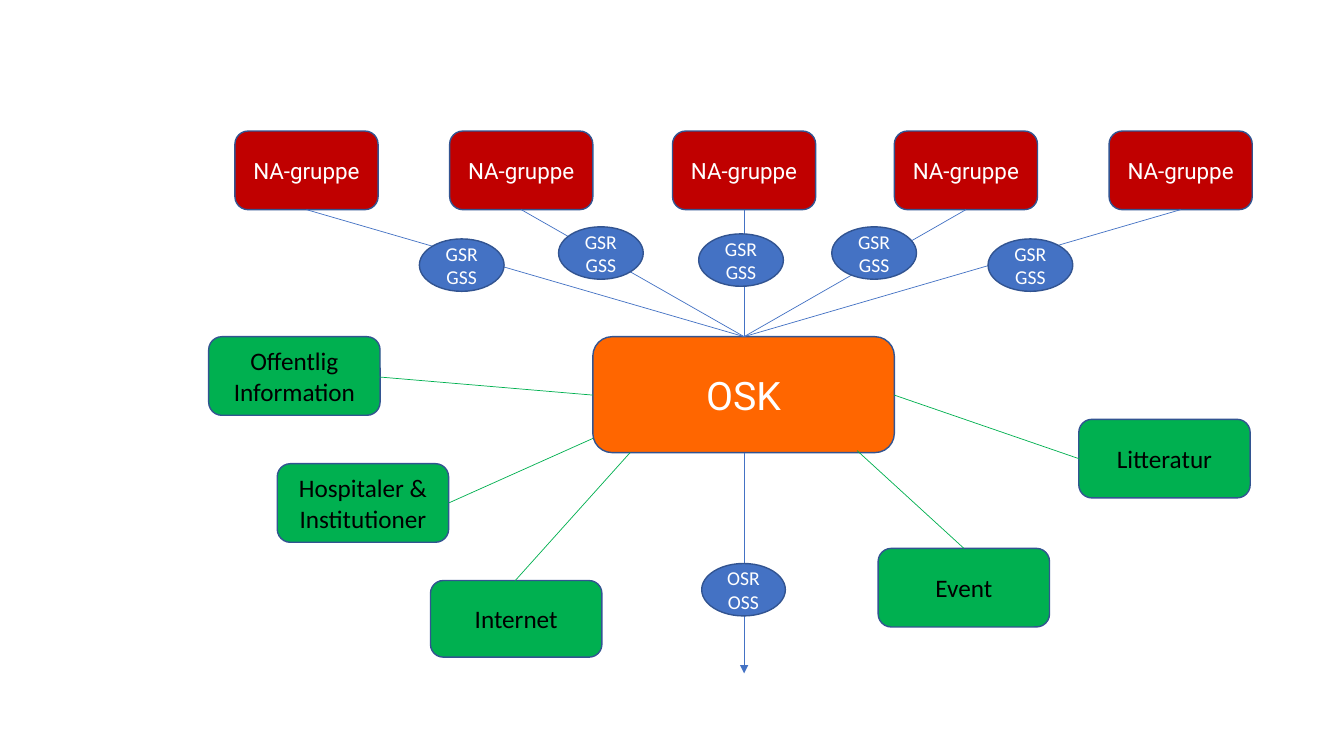
"""Build the OSK network slide: groups, service links and public contacts."""
from dataclasses import dataclass

import lxml.etree
import pptx
import pptx.dml.color
import pptx.enum.shapes
import pptx.enum.text
import pptx.oxml.ns
import pptx.shapes.connector
import pptx.slide
import pptx.util

Inches = pptx.util.Inches
ROUNDED = pptx.enum.shapes.MSO_SHAPE.ROUNDED_RECTANGLE
OVAL = pptx.enum.shapes.MSO_SHAPE.OVAL
Point = tuple[float, float]

BLUE, GREEN, OUTLINE = "4472C4", "00B050", "325491"


@dataclass(frozen=True)
class Style:
    geometry: pptx.enum.shapes.MSO_SHAPE
    fill: str
    font: str
    size: int
    ink: str


@dataclass(frozen=True)
class Node:
    left: float
    top: float
    width: float
    height: float
    lines: tuple[str, ...]
    style: Style


@dataclass(frozen=True)
class Contact:
    node: Node
    link_start: Point
    link_end: Point


GROUP = Style(ROUNDED, "C00000", "Roboto", 16, "FFFFFF")
HUB = Style(ROUNDED, "FF6600", "Roboto", 28, "FFFFFF")
SERVANT = Style(OVAL, BLUE, "Calibri", 14, "FFFFFF")
OUTREACH = Style(ROUNDED, GREEN, "Calibri", 18, "000000")

GROUP_TOP, GROUP_WIDTH, GROUP_HEIGHT = 1.3, 1.42, 0.78
GROUP_LEFTS = (2.33, 4.46, 6.67, 8.87, 11)
GROUP_SERVANT_CORNERS = ((4.16, 2.37), (5.54, 2.25), (6.93, 2.32), (8.25, 2.25), (9.8, 2.37))
OSK = Node(5.88, 3.34, 2.99, 1.15, ("OSK",), HUB)
OSK_CENTER = 7.38
OSK_BOTTOM = OSK.top + OSK.height
REGION_SERVANT = Node(6.96, 5.59, 0.83, 0.52, ("OSR", "OSS"), SERVANT)


def contact(left: float, top: float, lines: tuple[str, ...],
            link_start: Point, link_end: Point, height: float = 0.78) -> Contact:
    """Describe one public contact and its link to OSK."""
    return Contact(Node(left, top, 1.7, height, lines, OUTREACH), link_start, link_end)


CONTACTS = (
    contact(2.07, 3.34, ("Offentlig", "Information"), (5.88, 3.92), (3.76, 3.74)),
    contact(2.75, 4.6, ("Hospitaler & Institutioner",), (4.45, 4.99), (5.88, 4.35)),
    contact(4.27, 5.76, ("Internet",), (5.11, 5.76), (6.25, 4.49), 0.76),
    contact(8.71, 5.44, ("Event",), (8.5, 4.47), (9.56, 5.44)),
    contact(10.7, 4.16, ("Litteratur",), (8.87, 3.92), (10.7, 4.55)),
)


def color(value: str) -> pptx.dml.color.RGBColor:
    """Turn a hex string into a colour."""
    return pptx.dml.color.RGBColor.from_string(value)


def draw_node(slide: pptx.slide.Slide, node: Node) -> None:
    """Draw a labelled node."""
    style = node.style
    shape = slide.shapes.add_shape(
        style.geometry, Inches(node.left), Inches(node.top),
        Inches(node.width), Inches(node.height))
    shape.shadow.inherit = False
    shape.fill.solid()
    shape.fill.fore_color.rgb = color(style.fill)
    shape.line.color.rgb = color(OUTLINE)
    shape.line.width = pptx.util.Pt(1)
    frame = shape.text_frame
    frame.word_wrap = True
    frame.vertical_anchor = pptx.enum.text.MSO_ANCHOR.MIDDLE
    for index, line in enumerate(node.lines):
        paragraph = frame.add_paragraph() if index else frame.paragraphs[0]
        paragraph.alignment = pptx.enum.text.PP_ALIGN.CENTER
        run = paragraph.add_run()
        run.text = line
        run.font.name = style.font
        run.font.size = pptx.util.Pt(style.size)
        run.font.color.rgb = color(style.ink)


def draw_link(slide: pptx.slide.Slide, start: Point, end: Point,
              ink: str) -> pptx.shapes.connector.Connector:
    """Draw a thin straight link between two points."""
    link = slide.shapes.add_connector(
        pptx.enum.shapes.MSO_CONNECTOR.STRAIGHT, *map(Inches, (*start, *end)))
    link.line.color.rgb = color(ink)
    link.line.width = pptx.util.Pt(0.5)
    properties = link.element.spPr
    lxml.etree.SubElement(properties, pptx.oxml.ns.qn("a:effectLst"))
    return link


def add_arrowhead(link: pptx.shapes.connector.Connector) -> None:
    """Put a triangle at the end of a link."""
    outline = link.line.fill._xPr
    lxml.etree.SubElement(outline, pptx.oxml.ns.qn("a:tailEnd"), type="triangle")


def main() -> None:
    """Draw the network and save it."""
    presentation = pptx.Presentation()
    presentation.slide_width = Inches(13.33)
    presentation.slide_height = Inches(7.5)
    slide = presentation.slides.add_slide(presentation.slide_layouts[6])

    for left in GROUP_LEFTS:
        draw_node(slide, Node(left, GROUP_TOP, GROUP_WIDTH, GROUP_HEIGHT, ("NA-gruppe",), GROUP))
    draw_node(slide, OSK)
    for left in GROUP_LEFTS:
        group_foot = (left + GROUP_WIDTH / 2, GROUP_TOP + GROUP_HEIGHT)
        draw_link(slide, group_foot, (OSK_CENTER, OSK.top), BLUE)
    for left, top in GROUP_SERVANT_CORNERS:
        draw_node(slide, Node(left, top, 0.84, 0.52, ("GSR", "GSS"), SERVANT))

    add_arrowhead(draw_link(slide, (OSK_CENTER, OSK_BOTTOM), (OSK_CENTER, 6.68), BLUE))
    draw_node(slide, REGION_SERVANT)
    for outreach in CONTACTS:
        draw_node(slide, outreach.node)
        draw_link(slide, outreach.link_start, outreach.link_end, GREEN)

    presentation.save("out.pptx")


if __name__ == "__main__":
    main()
